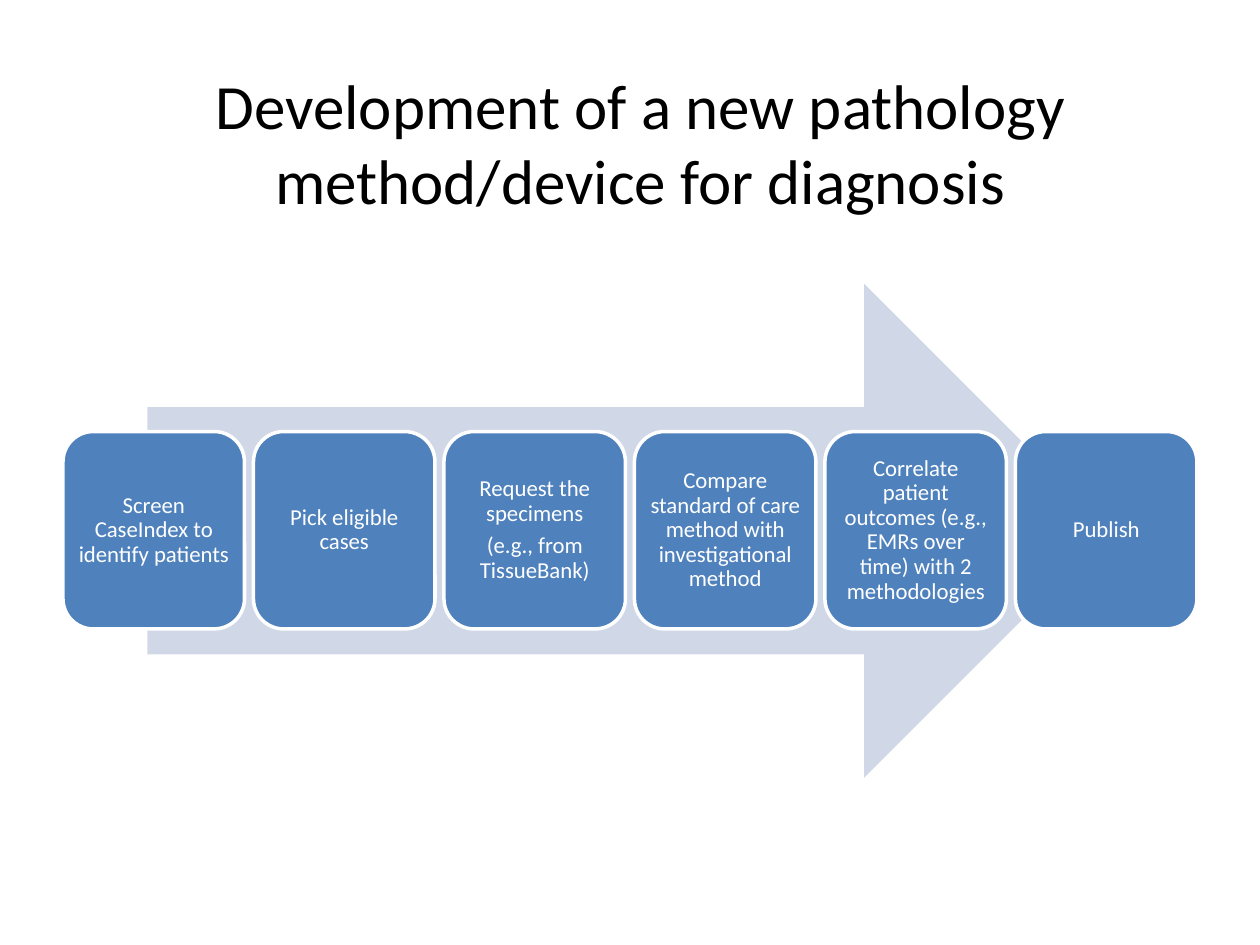
import pptx
import pptx.util
import pptx.dml.color
import pptx.enum.shapes
import pptx.enum.text

Cm = pptx.util.Cm
Pt = pptx.util.Pt
RGBColor = pptx.dml.color.RGBColor
SHAPE = pptx.enum.shapes.MSO_SHAPE

BLACK = RGBColor(0x00, 0x00, 0x00)
WHITE = RGBColor(0xFF, 0xFF, 0xFF)
BLUE = RGBColor(0x4F, 0x81, 0xBD)
PALE_BLUE = RGBColor(0xD0, 0xD8, 0xE8)

TITLE = "Development of a new pathology method/device for diagnosis"
STEPS = [
    ["Screen CaseIndex to identify patients"],
    ["Pick eligible cases"],
    ["Request the specimens", "(e.g., from TissueBank)"],
    ["Compare standard of care method with investigational method"],
    ["Correlate patient outcomes (e.g., EMRs over time) with 2 methodologies"],
    ["Publish"],
]
FIRST_STEP_LEFT = 1.27
STEP_PITCH = 3.84


def write_text(shape, lines, size, color):
    frame = shape.text_frame
    frame.word_wrap = True
    frame.vertical_anchor = pptx.enum.text.MSO_ANCHOR.MIDDLE
    frame.text = "\n".join(lines)
    for paragraph in frame.paragraphs:
        paragraph.alignment = pptx.enum.text.PP_ALIGN.CENTER
        paragraph.font.name = "Calibri"
        paragraph.font.size = Pt(size)
        paragraph.font.color.rgb = color
    return frame


def add_title(page):
    box = page.shapes.add_textbox(Cm(1.9), Cm(1.27), Cm(22.02), Cm(3.18))
    write_text(box, [TITLE], 36, BLACK)


def add_arrow(page):
    arrow = page.shapes.add_shape(
        SHAPE.RIGHT_ARROW, Cm(2.97), Cm(5.72), Cm(19.43), Cm(9.96))
    arrow.shadow.inherit = False
    arrow.fill.solid()
    arrow.fill.fore_color.rgb = PALE_BLUE
    arrow.line.fill.background()


def add_step(page, left, lines):
    step = page.shapes.add_shape(
        SHAPE.ROUNDED_RECTANGLE, Cm(left), Cm(8.7), Cm(3.66), Cm(3.98))
    step.shadow.inherit = False
    step.fill.solid()
    step.fill.fore_color.rgb = BLUE
    step.line.color.rgb = WHITE
    step.line.width = Pt(2)
    frame = write_text(step, lines, 13, WHITE)
    frame.margin_left = frame.margin_right = Cm(0.13)
    frame.margin_top = frame.margin_bottom = Cm(0.13)
    for paragraph in frame.paragraphs:
        paragraph.line_spacing = 0.9
        paragraph.space_after = Pt(4.5)


def main():
    deck = pptx.Presentation()
    deck.slide_width = Cm(25.4)
    deck.slide_height = Cm(19.05)
    page = deck.slides.add_slide(deck.slide_layouts[6])
    add_title(page)
    add_arrow(page)
    for index, lines in enumerate(STEPS):
        add_step(page, FIRST_STEP_LEFT + index * STEP_PITCH, lines)
    deck.save("out.pptx")


if __name__ == "__main__":
    main()
